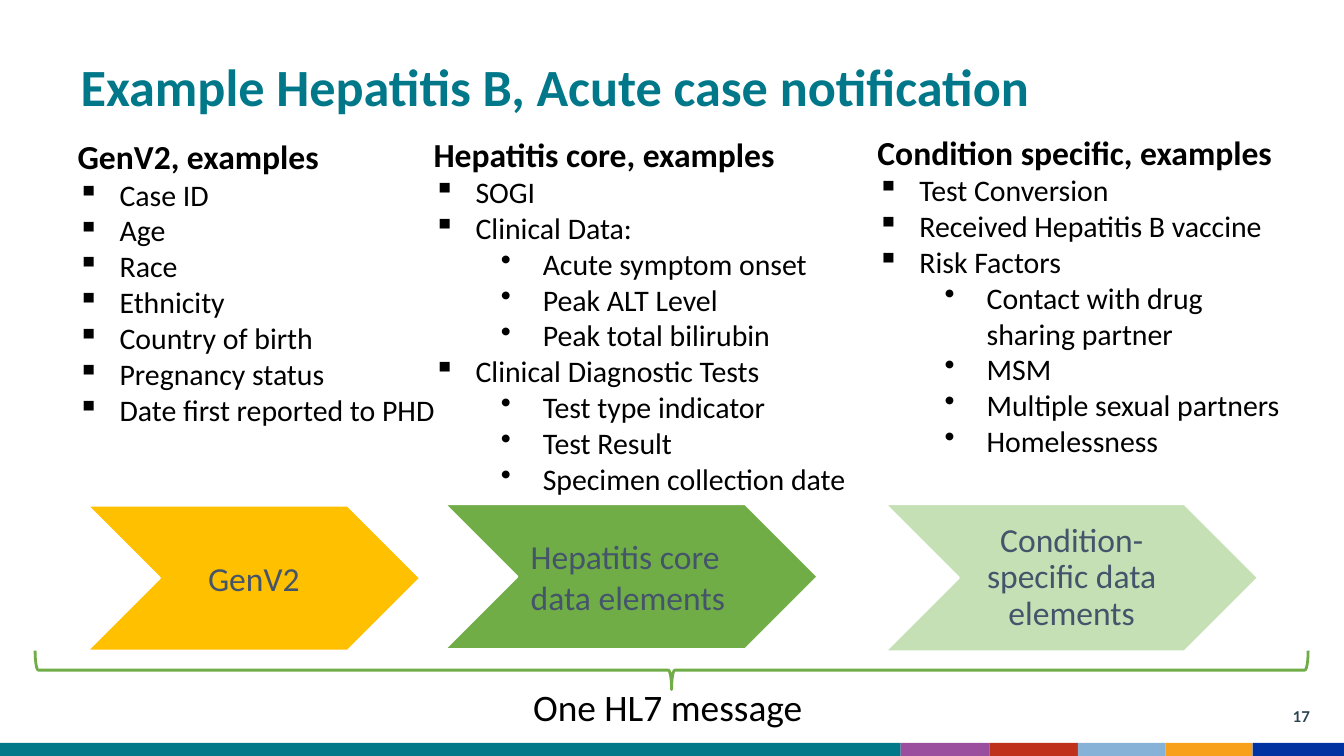
from dataclasses import dataclass
from itertools import pairwise
from typing import Any

from lxml.etree import SubElement as Sub
from pptx import Presentation
from pptx.dml.color import RGBColor as Rgb
from pptx.enum.shapes import MSO_SHAPE as Form
from pptx.enum.text import MSO_ANCHOR as Anchor, MSO_AUTO_SIZE as Fit, PP_ALIGN as Align
from pptx.oxml.ns import qn
from pptx.util import Pt


@dataclass(frozen=True)
class Theme:
    """Colours, fonts and type sizes of the slide."""
    face: str = "Calibri"
    small: str = "Lato"
    teal: str = "007889"
    green: str = "70AD47"
    gold: str = "FFC000"
    pale: str = "C5E0B4"
    slate: str = "44546A"
    dark: str = "28434E"
    black: str = "000000"
    white: str = "FFFFFF"
    strip: tuple[str, ...] = ("007889", "9B4E9E", "BF311B", "86B2D7", "F8A01B", "0033A1")
    title: int = 28
    sum: int = 20
    head: int = 18
    body: int = 16
    page: int = 8


@dataclass(frozen=True)
class Box:
    """A place on the slide, in points."""
    left: float
    top: float
    width: float
    height: float

    def lens(self) -> tuple[Pt, ...]:
        """Return the four lengths for python-pptx."""
        return Pt(self.left), Pt(self.top), Pt(self.width), Pt(self.height)


@dataclass(frozen=True)
class Item:
    """A bullet and its level."""
    text: str
    level: int = 0


@dataclass(frozen=True)
class List:
    """A headed list of data elements."""
    box: Box
    head: str
    items: tuple[Item, ...]


@dataclass(frozen=True)
class Step:
    """A chevron of the message."""
    box: Box
    text: str
    fill: str
    align: Align = Align.CENTER
    space: float = 1.0


LOOK = Theme()
MARKS = ("▪", "•")
EDGES = (0, 482.5, 530, 577.5, 624.5, 671, 720)

LISTS = (
    List(Box(34.5, 69.3, 209, 167), "GenV2, examples", (
        Item("Case ID"), Item("Age"), Item("Race"), Item("Ethnicity"),
        Item("Country of birth"), Item("Pregnancy status"),
        Item("Date first reported to PHD"))),
    List(Box(225.2, 68, 237.6, 203.8), "Hepatitis core, examples", (
        Item("SOGI"), Item("Clinical Data:"), Item("Acute symptom onset", 1),
        Item("Peak ALT Level", 1), Item("Peak total bilirubin", 1),
        Item("Clinical Diagnostic Tests"), Item("Test type indicator", 1),
        Item("Test Result", 1), Item("Specimen collection date", 1))),
    List(Box(463, 67, 233.3, 184.3), "Condition specific, examples", (
        Item("Test Conversion"), Item("Received Hepatitis B vaccine"),
        Item("Risk Factors"), Item("Contact with drug sharing partner", 1),
        Item("MSM", 1), Item("Multiple sexual partners", 1),
        Item("Homelessness", 1))),
)

STEPS = (
    Step(Box(47, 271, 178, 77.5), "GenV2", LOOK.gold),
    Step(Box(238.5, 270.2, 199.5, 77.5), "Hepatitis core data elements",
         LOOK.green, Align.LEFT),
    Step(Box(474.4, 270.2, 199.5, 78.8), "Condition-specific data elements",
         LOOK.pale, space=0.9),
)


def write(para: Any, text: str, size: int, tint: str, bold: bool = False,
          face: str = LOOK.face, align: Align = Align.LEFT) -> None:
    """Fill a paragraph and set its font."""
    para.text = text
    para.alignment = align
    font = para.font
    font.name, font.size, font.bold = face, Pt(size), bold
    font.color.rgb = Rgb.from_string(tint)


def mark(para: Any, level: int) -> None:
    """Give a paragraph the bullet of its level."""
    para.level = level
    props = para._p.get_or_add_pPr()
    props.set("marL", str(Pt(22.5 + 36 * level)))
    props.set("indent", str(Pt(-22.5)))
    Sub(props, qn("a:buChar")).set("char", MARKS[level])


def shape(slide: Any, form: Form, box: Box, fill: str | None = None,
          line: str | None = None, width: float = 1) -> Any:
    """Add a flat preset shape."""
    item = slide.shapes.add_shape(form, *box.lens())
    item.shadow.inherit = False
    if fill:
        item.fill.solid()
        item.fill.fore_color.rgb = Rgb.from_string(fill)
    else:
        item.fill.background()
    if line:
        item.line.color.rgb = Rgb.from_string(line)
        item.line.width = Pt(width)
    else:
        item.line.fill.background()
    return item


def frame(slide: Any, box: Box, wrap: bool = True) -> Any:
    """Add a text box and return its frame."""
    text = slide.shapes.add_textbox(*box.lens()).text_frame
    text.word_wrap = wrap
    return text


def listing(slide: Any, data: List) -> None:
    """Draw a headed list."""
    text = frame(slide, data.box)
    text.auto_size = Fit.SHAPE_TO_FIT_TEXT
    write(text.paragraphs[0], data.head, LOOK.head, LOOK.black, True)
    for item in data.items:
        para = text.add_paragraph()
        write(para, item.text, LOOK.body, LOOK.black)
        mark(para, item.level)


def chevron(slide: Any, step: Step) -> None:
    """Draw a chevron with its label."""
    text = shape(slide, Form.CHEVRON, step.box, step.fill, LOOK.white).text_frame
    text.word_wrap = True
    text.vertical_anchor = Anchor.MIDDLE
    para = text.paragraphs[0]
    write(para, step.text, LOOK.head, LOOK.slate, align=step.align)
    para.line_spacing = step.space


def heading(slide: Any, words: str) -> None:
    """Place and format the title."""
    title = slide.shapes.title
    title.left, title.top, title.width, title.height = Box(36, 29.5, 648, 52).lens()
    text = title.text_frame
    text.auto_size = Fit.NONE
    text.vertical_anchor = Anchor.TOP
    write(text.paragraphs[0], words, LOOK.title, LOOK.teal, True)
    text.paragraphs[0].line_spacing = 0.9


def main() -> None:
    """Build the slide and save it."""
    deck = Presentation()
    deck.slide_width, deck.slide_height = Pt(720), Pt(405)
    slide = deck.slides.add_slide(deck.slide_layouts.get_by_name("Title Only"))
    for (left, right), tint in zip(pairwise(EDGES), LOOK.strip):
        shape(slide, Form.RECTANGLE, Box(left, 398, right - left, 7), tint)
    heading(slide, "Example Hepatitis B, Acute case notification")
    for step in STEPS:
        chevron(slide, step)
    brace = shape(slide, Form.LEFT_BRACE, Box(349.4, 18, 20.8, 682),
                  line=LOOK.green, width=1.5)
    brace.rotation = 270
    for data in LISTS:
        listing(slide, data)
    total = frame(slide, Box(278.5, 363, 160.5, 31.5), False)
    total.auto_size = Fit.SHAPE_TO_FIT_TEXT
    write(total.paragraphs[0], "One HL7 message", LOOK.sum, LOOK.black)
    page = frame(slide, Box(672.5, 373, 36.5, 21.6))
    page.vertical_anchor = Anchor.MIDDLE
    write(page.paragraphs[0], "17", LOOK.page, LOOK.dark, True, LOOK.small, Align.RIGHT)
    deck.save("out.pptx")


if __name__ == "__main__":
    main()
